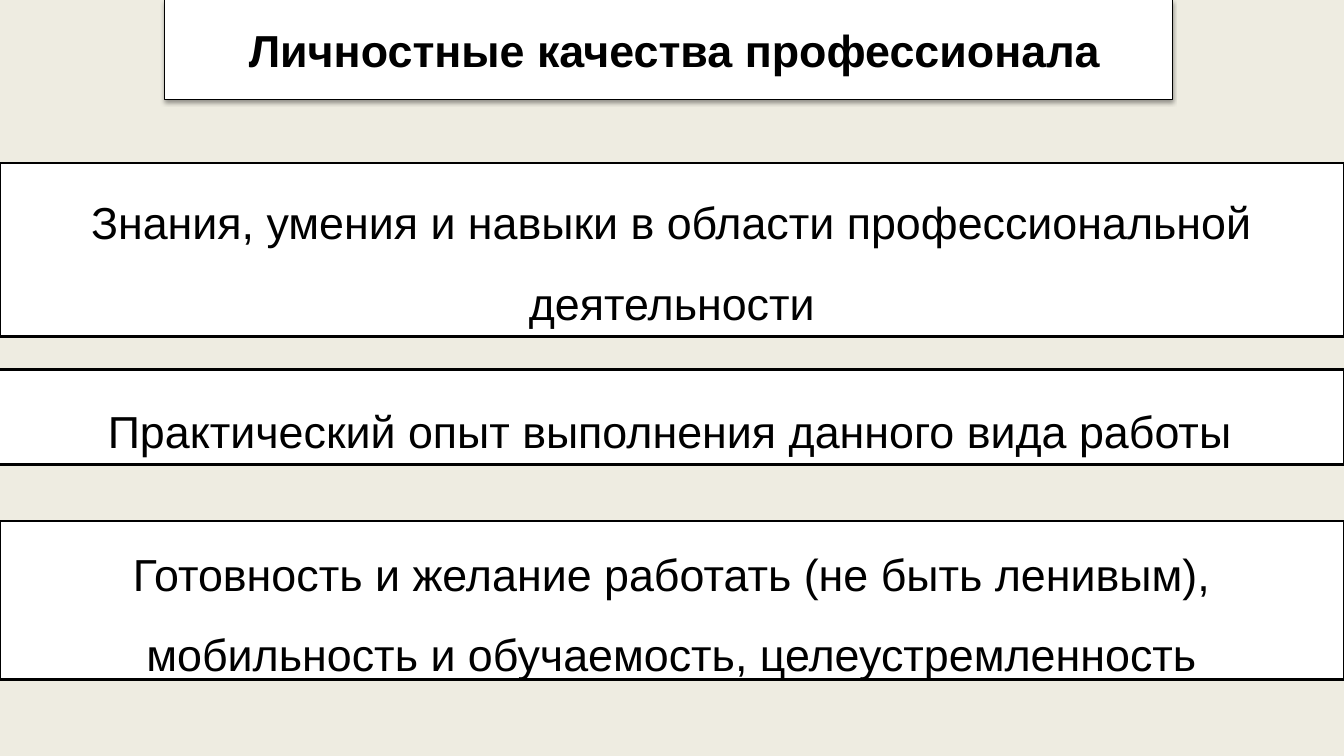
from lxml import etree
from pptx import Presentation
from pptx.dml.color import RGBColor
from pptx.enum import shapes, text
from pptx.oxml import ns
from pptx.util import Cm, Pt

COLORS = {"background": "EEECE1", "box": "FFFFFF", "ink": "000000"}
WIDTH, HEIGHT = 33.87, 19.05
TITLE_BOX = (4.14, 0, 25.4, 2.51)
TITLE_INDENT = 2.13
QUALITIES = [
    ((0, 4.11, WIDTH, 4.37), text.MSO_ANCHOR.TOP,
     "Знания, умения и навыки в области профессиональной деятельности"),
    ((-0.08, 9.32, WIDTH + 0.08, 2.39), text.MSO_ANCHOR.MIDDLE,
     "Практический опыт выполнения данного вида работы"),
    ((0, 13.13, WIDTH, 3.99), text.MSO_ANCHOR.MIDDLE,
     "Готовность и желание работать (не быть ленивым), "
     "мобильность и обучаемость, целеустремленность"),
]


def color(name):
    return RGBColor.from_string(COLORS[name])


def add_box(s, box, words, line_width, anchor):
    """Add an outlined white box with one paragraph; return both."""
    sp = s.shapes.add_shape(shapes.MSO_SHAPE.RECTANGLE, *map(Cm, box))
    sp.shadow.inherit = False
    sp.fill.solid()
    sp.fill.fore_color.rgb = color("box")
    sp.line.color.rgb = color("ink")
    sp.line.width = Pt(line_width)
    tf = sp.text_frame
    tf.word_wrap = True
    tf.vertical_anchor = anchor
    p = tf.paragraphs[0]
    p.text = words
    p.font.name = "Arial"
    p.font.size = Pt(32)
    p.font.color.rgb = color("ink")
    return sp, p


def add_shadow(sp):
    """Cast a soft shadow straight down."""
    effects = sp.element.spPr.find(ns.qn("a:effectLst"))
    shadow = etree.SubElement(effects, ns.qn("a:outerShdw"), blurRad=str(Pt(3.1)),
                              dist=str(Pt(1.6)), dir="5400000", rotWithShape="0")
    tint = etree.SubElement(shadow, ns.qn("a:srgbClr"), val=COLORS["ink"])
    etree.SubElement(tint, ns.qn("a:alpha"), val="38000")


def add_title(s, box):
    sp, p = add_box(s, box, "Личностные качества профессионала", 0.75,
                    text.MSO_ANCHOR.MIDDLE)
    add_shadow(sp)
    sp.text_frame.margin_left = Cm(TITLE_INDENT)
    p.alignment = text.PP_ALIGN.LEFT
    p.font.bold = True


def add_quality(s, box, anchor, words):
    _, p = add_box(s, box, words, 2, anchor)
    p.alignment = text.PP_ALIGN.CENTER
    p.line_spacing = 1.5


def main():
    prs = Presentation()
    prs.slide_width, prs.slide_height = Cm(WIDTH), Cm(HEIGHT)
    s = prs.slides.add_slide(prs.slide_layouts[6])
    s.background.fill.solid()
    s.background.fill.fore_color.rgb = color("background")
    add_title(s, TITLE_BOX)
    for box, anchor, words in QUALITIES:
        add_quality(s, box, anchor, words)
    prs.save("out.pptx")


if __name__ == "__main__":
    main()
